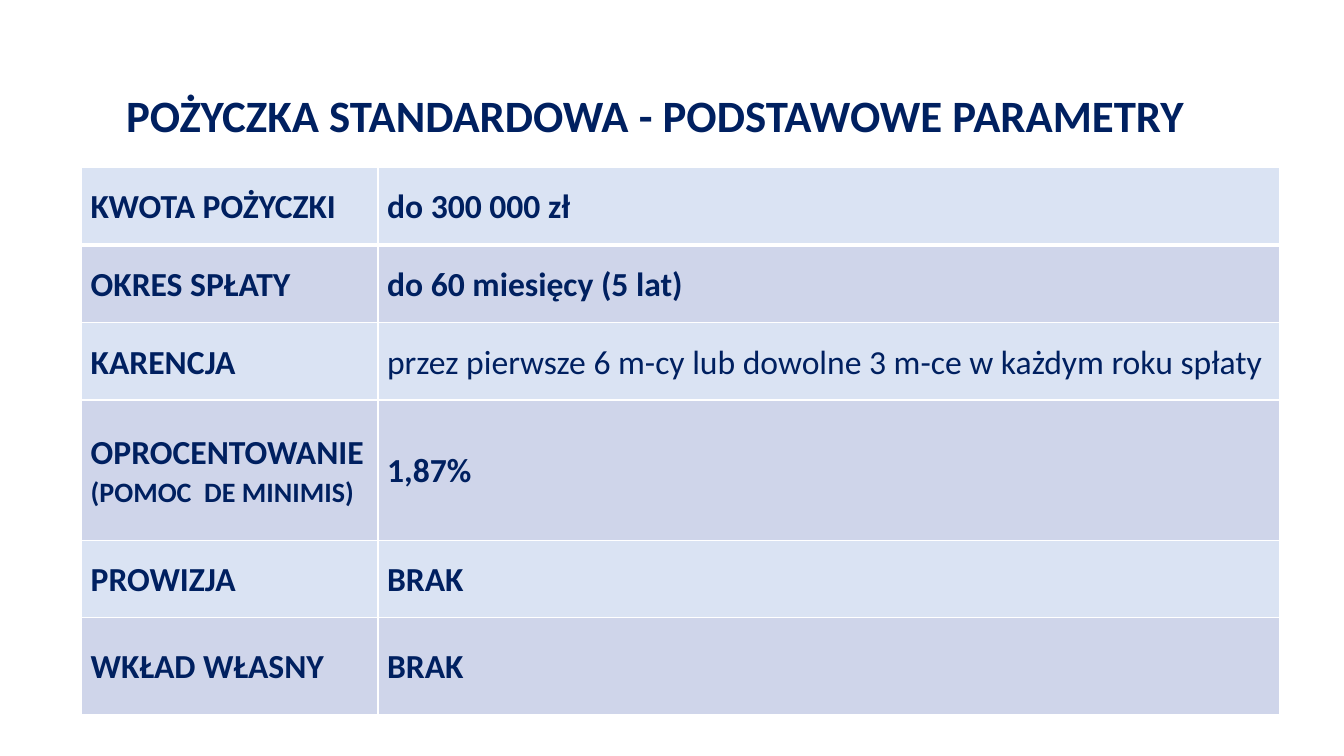
from lxml import etree
from pptx import Presentation, util as u
from pptx.dml.color import RGBColor
from pptx.enum import text
from pptx.oxml import ns

TITLE = "POŻYCZKA STANDARDOWA - PODSTAWOWE PARAMETRY "
ROWS = [
    (77, "KWOTA POŻYCZKI", "do 300 000 zł"),
    (77, "OKRES SPŁATY", "do 60 miesięcy (5 lat)"),
    (77, "KARENCJA", "przez pierwsze 6 m-cy lub dowolne 3 m-ce w każdym roku spłaty"),
    (139, "OPROCENTOWANIE\n(POMOC  DE MINIMIS)", "1,87%"),
    (77, "PROWIZJA", "BRAK"),
    (96, "WKŁAD WŁASNY", "BRAK"),
]
COLS = [294, 894]
REGULAR = (2, 1)
NAVY, WHITE = "002060", "FFFFFF"
BANDS = ["DAE3F3", "CFD5EA"]


def px(n):
    return u.Emu(n * 9144)


def color(value):
    return RGBColor.from_string(value)


def style(p, size, bold, spacing):
    p.line_spacing = spacing
    for r in p.runs:
        r.font.name = "Calibri"
        r.font.size = u.Pt(size)
        r.font.bold = bold
        r.font.color.rgb = color(NAVY)


def border(cell, side, width):
    tc_pr = cell._tc.get_or_add_tcPr()
    ln = etree.SubElement(tc_pr, ns.qn(f"a:ln{side}"), w=str(u.Pt(width)))
    fill = etree.SubElement(ln, ns.qn("a:solidFill"))
    etree.SubElement(fill, ns.qn("a:srgbClr"), val=WHITE)


def add_title(s):
    sp = s.shapes.title
    sp.left, sp.top, sp.width, sp.height = map(px, (80, 83, 1150, 68))
    tf = sp.text_frame
    tf.text = TITLE
    tf.word_wrap = True
    tf.vertical_anchor = text.MSO_ANCHOR.MIDDLE
    p = tf.paragraphs[0]
    p.alignment = text.PP_ALIGN.CENTER
    style(p, 32, True, 0.9)


def add_parameters(s):
    height = sum(row[0] for row in ROWS)
    frame = s.shapes.add_table(len(ROWS), len(COLS), px(81), px(166), px(sum(COLS)), px(height))
    table = frame.table
    table.first_row = False
    for column, width in zip(table.columns, COLS):
        column.width = px(width)
    for i, (row_height, *values) in enumerate(ROWS):
        table.rows[i].height = px(row_height)
        for j, value in enumerate(values):
            cell = table.cell(i, j)
            cell.text_frame.text = value
            cell.vertical_anchor = text.MSO_ANCHOR.MIDDLE
            cell.margin_left = cell.margin_right = px(9)
            cell.margin_top = cell.margin_bottom = px(4)
            for side in "LRTB":
                border(cell, side, 3 if (i, side) in ((0, "B"), (1, "T")) else 1)
            cell.fill.solid()
            cell.fill.fore_color.rgb = color(BANDS[i % 2])
            for k, p in enumerate(cell.text_frame.paragraphs):
                style(p, 20 if k else 24, (i, j) != REGULAR, 1.07)


def main():
    prs = Presentation()
    prs.slide_width, prs.slide_height = px(1333), px(750)
    s = prs.slides.add_slide(prs.slide_layouts[5])
    add_title(s)
    add_parameters(s)
    prs.save("out.pptx")


if __name__ == "__main__":
    main()
